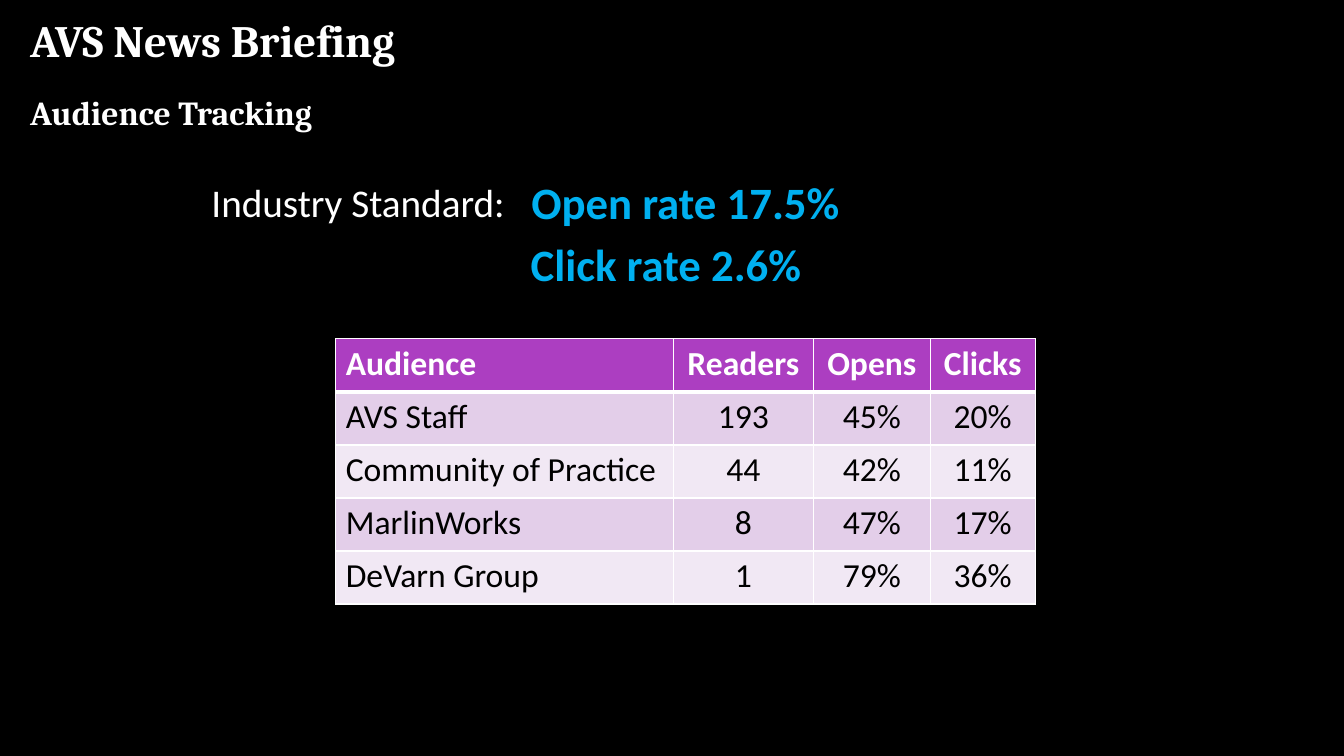
from lxml.etree import SubElement
from pptx import Presentation
from pptx.dml.color import RGBColor
from pptx.enum.text import MSO_ANCHOR, PP_ALIGN
from pptx.oxml.ns import qn
from pptx.util import Pt

WHITE, BLACK, BLUE = "FFFFFF", "000000", "00B0F0"
PURPLE, LILAC, PALE = "AC3EC1", "E3CEE9", "F1E8F4"
HEAD = ["Audience", "Readers", "Opens", "Clicks"]
ROWS = [
    ["AVS Staff", "193", "45%", "20%"],
    ["Community of Practice", "44", "42%", "11%"],
    ["MarlinWorks", "8", "47%", "17%"],
    ["DeVarn Group", "1", "79%", "36%"],
]
WIDTHS = [241.2, 100, 83.5, 75]


def color(code):
    """Turn a hex string into a colour."""
    return RGBColor.from_string(code)


def write(frame, text, size, code=WHITE, bold=False, face="Calibri", align=PP_ALIGN.LEFT):
    """Write one formatted run in the first paragraph of a frame."""
    para = frame.paragraphs[0]
    para.alignment = align
    run = para.add_run()
    run.text = text
    font = run.font
    font.name, font.size, font.bold = face, Pt(size), bold
    font.color.rgb = color(code)


def add_title(slide, text, box):
    """Move and fill the title placeholder."""
    title = slide.shapes.title
    title.left, title.top, title.width, title.height = map(Pt, box)
    title.text_frame.vertical_anchor = MSO_ANCHOR.TOP
    write(title.text_frame, text, 32, bold=True, face="Cambria")


def add_label(slide, text, box, size, anchor=MSO_ANCHOR.MIDDLE, **style):
    """Add a wrapped text box with one line."""
    frame = slide.shapes.add_textbox(*map(Pt, box)).text_frame
    frame.word_wrap = True
    frame.vertical_anchor = anchor
    write(frame, text, size, **style)


def add_edge(cell, side, width):
    """Draw one white border of a cell."""
    line = SubElement(cell._tc.get_or_add_tcPr(), qn(f"a:{side}"), w=str(Pt(width)))
    fill = SubElement(line, qn("a:solidFill"))
    SubElement(fill, qn("a:srgbClr"), val=WHITE)


def add_cell(cell, text, row, col):
    """Fill, border and write one table cell."""
    edges = {"lnL": 1, "lnR": 1, "lnT": 3 if row == 1 else 1, "lnB": 3 if row == 0 else 1}
    for side, width in edges.items():
        add_edge(cell, side, width)
    cell.fill.solid()
    cell.fill.fore_color.rgb = color(PURPLE if row == 0 else LILAC if row % 2 else PALE)
    write(cell.text_frame, text, 24, WHITE if row == 0 else BLACK, bold=row == 0,
          align=PP_ALIGN.CENTER if col else PP_ALIGN.LEFT)


def add_grid(slide, data, left, top):
    """Add the audience table."""
    high = 37.9
    shape = slide.shapes.add_table(len(data), len(WIDTHS), Pt(left), Pt(top),
                                   Pt(sum(WIDTHS)), Pt(high * len(data)))
    table = shape.table
    for col, width in zip(table.columns, WIDTHS):
        col.width = Pt(width)
    for r, line in enumerate(data):
        table.rows[r].height = Pt(high)
        for c, text in enumerate(line):
            add_cell(table.cell(r, c), text, r, c)


def main():
    """Build the audience slide and save it."""
    deck = Presentation()
    deck.slide_width, deck.slide_height = Pt(960), Pt(540)
    slide = deck.slides.add_slide(deck.slide_layouts[5])
    back = slide.background.fill
    back.solid()
    back.fore_color.rgb = color(BLACK)
    add_title(slide, "AVS News Briefing", (14.4, 5.8, 720, 46))
    add_label(slide, "Audience Tracking", (14.4, 62, 228, 36), 24,
              anchor=MSO_ANCHOR.TOP, bold=True, face="Cambria")
    add_label(slide, "Industry Standard:", (144, 126, 235, 36), 28)
    add_label(slide, "Open rate 17.5%", (359, 118, 261.4, 52), 32,
              code=BLUE, bold=True, align=PP_ALIGN.CENTER)
    add_label(slide, "Click rate 2.6%", (372, 170, 235, 36), 32, code=BLUE, bold=True)
    add_grid(slide, [HEAD] + ROWS, 239.8, 242)
    deck.save("out.pptx")


if __name__ == "__main__":
    main()
